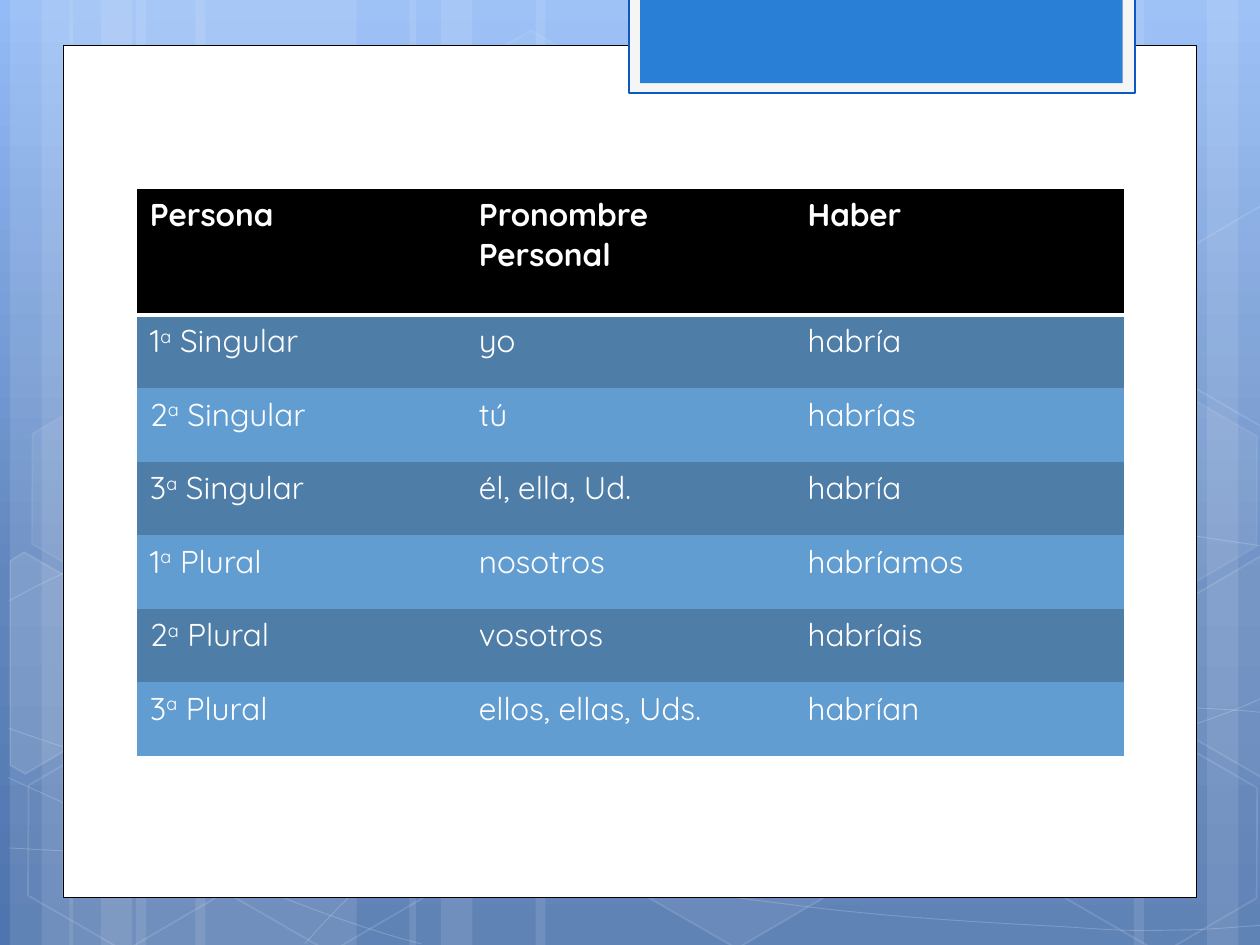
import copy
import math
from dataclasses import dataclass
from typing import Optional

import pptx
import pptx.dml.color
import pptx.enum.shapes
import pptx.oxml
import pptx.oxml.ns
import pptx.util
from lxml import etree

Inches, Pt = pptx.util.Inches, pptx.util.Pt
SHAPE = pptx.enum.shapes.MSO_SHAPE
qn = pptx.oxml.ns.qn
TILT = 30


@dataclass(frozen=True)
class Theme:
    font: str = "Quicksand"
    body: float = 18
    white: str = "FFFFFF"
    black: str = "000000"
    tab: str = "297FD5"
    tab_frame: str = "F5F5F5"
    tab_line: str = "0E58C4"
    bands: tuple = ("4E7EA7", "629DD1")
    sky: tuple = ((0, "93BBF6"), (0.62, "6186BE"), (1, "4F75AE"))


@dataclass(frozen=True)
class Style:
    fill: Optional[str] = None
    fill_alpha: int = 100
    line: Optional[str] = None
    width: float = 1
    line_alpha: int = 100


@dataclass(frozen=True)
class Hexagon:
    x: float
    y: float
    fill_alpha: int
    line_alpha: int


@dataclass(frozen=True)
class CutHexagon:
    center: tuple
    corners: tuple
    fill_alpha: int


T = Theme()


def rgb(value: str):
    return pptx.dml.color.RGBColor.from_string(value)


def paint(fill, color: str, alpha: int = 100) -> None:
    fill.solid()
    fill.fore_color.rgb = rgb(color)
    if alpha < 100:
        node = fill._xPr.find(qn("a:solidFill")).find(qn("a:srgbClr"))
        etree.SubElement(node, qn("a:alpha")).set("val", str(alpha * 1000))


def apply_style(sp, style: Style) -> None:
    sp.shadow.inherit = False
    if style.fill and style.fill_alpha:
        paint(sp.fill, style.fill, style.fill_alpha)
    else:
        sp.fill.background()
    if style.line:
        sp.line.width = Pt(style.width)
        paint(sp.line.fill, style.line, style.line_alpha)
    else:
        sp.line.fill.background()


def add_box(s, x: float, y: float, w: float, h: float, style: Style, kind=SHAPE.RECTANGLE):
    sp = s.shapes.add_shape(kind, Inches(x), Inches(y), Inches(w), Inches(h))
    apply_style(sp, style)
    return sp


def add_outline(s, points, style: Style, close: bool):
    # Freeform coordinates are whole numbers, so lengths go in as EMU
    (x, y), *rest = [(Inches(px), Inches(py)) for px, py in points]
    fb = s.shapes.build_freeform(x, y)
    fb.add_line_segments(rest, close=close)
    sp = fb.convert_to_shape()
    apply_style(sp, style)
    return sp


def add_curve(s, knots, style: Style) -> None:
    """Turn each three line segments into one cubic Bézier segment."""
    sp = add_outline(s, knots, style, close=False)
    segments = list(sp._element.iter(qn("a:lnTo")))
    for i in range(0, len(segments), 3):
        curve = etree.Element(qn("a:cubicBezTo"))
        segments[i].addprevious(curve)
        for segment in segments[i:i + 3]:
            curve.append(segment[0])
            segment.getparent().remove(segment)


def add_hexagon(s, item: Hexagon) -> None:
    style = Style(T.white, item.fill_alpha, T.white, 1, item.line_alpha)
    sp = add_box(s, item.x, item.y, 1.75, 1.52, style, SHAPE.HEXAGON)
    sp.adjustments[0] = 0.285
    sp.rotation = TILT


def add_cut_hexagon(s, item: CutHexagon) -> None:
    """Lay the corners level about the center, then tilt the shape."""
    cx, cy = item.center
    cos, sin = math.cos(math.radians(TILT)), math.sin(math.radians(TILT))
    level = [(cx + (x - cx) * cos + (y - cy) * sin, cy - (x - cx) * sin + (y - cy) * cos)
             for x, y in item.corners]
    style = Style(T.white, item.fill_alpha, T.white, 1, 12)
    add_outline(s, level, style, close=True).rotation = TILT


def add_text(p, text: str, *, bold: bool = False, raised: bool = False) -> None:
    r = p.add_run()
    r.text = text
    r.font.name, r.font.size, r.font.bold = T.font, Pt(T.body), bold
    r.font.color.rgb = rgb(T.white)
    if raised:
        r.font._element.set("baseline", "30000")


def underline_cell(cell, color: str, width: float) -> None:
    ln = pptx.oxml.parse_xml(
        f'<a:lnB {pptx.oxml.ns.nsdecls("a")} w="{Pt(width)}"><a:solidFill>'
        f'<a:srgbClr val="{color}"/></a:solidFill></a:lnB>')
    cell._tc.get_or_add_tcPr().insert(0, ln)


def paint_background(s) -> None:
    fill = s.background.fill
    fill.gradient()
    fill.gradient_angle = 270
    stop_list = next(s.element.iter(qn("a:gsLst")))
    stop_list.append(copy.deepcopy(stop_list[-1]))
    for stop, (position, color) in zip(fill.gradient_stops, T.sky):
        stop.position = position
        stop.color.rgb = rgb(color)


def add_conjugation(s, header, rows) -> None:
    frame = s.shapes.add_table(len(rows) + 1, len(header), Inches(1.09), Inches(1.5),
                               Inches(7.83), Inches(4.5))
    table = frame.table
    table.horz_banding = False
    # "No Style, No Grid"
    next(frame._element.iter(qn("a:tableStyleId"))).text = "{2D5ABB26-0587-4C30-8999-92F81FD0307C}"
    for col in table.columns:
        col.width = Inches(2.61)
    for i, row in enumerate(table.rows):
        row.height = Inches(3.5 / len(rows) if i else 1)
    for c, title in enumerate(header):
        cell = table.cell(0, c)
        paint(cell.fill, T.black)
        underline_cell(cell, T.white, 2)
        add_text(cell.text_frame.paragraphs[0], title, bold=True)
    for i, ((ordinal, number), *words) in enumerate(rows):
        cells = [table.cell(i + 1, c) for c in range(len(header))]
        for cell in cells:
            paint(cell.fill, T.bands[i % 2])
        p = cells[0].text_frame.paragraphs[0]
        add_text(p, ordinal)
        add_text(p, "a", raised=True)
        add_text(p, f" {number}")
        for cell, word in zip(cells[1:], words):
            add_text(cell.text_frame.paragraphs[0], word)


STRIPES = ((1.08, 1.75), (0.08, 0.5), (0.33, 0.83), (1.55, 1.75), (0.55, 0.5), (0.8, 0.83),
           (7.33, 1.75), (9.58, 0.5), (9, 0.83), (4.25, 3.08), (3.25, 0.5), (3.5, 0.83))
CURVES = (
    ((0.07, 6.73), (0.61, 6.76), (1.15, 6.79), (1.9, 6.78), (2.65, 6.77), (3.58, 6.75), (4.58, 6.65),
     (5.58, 6.55), (7, 6.36), (7.92, 6.17), (8.83, 5.98), (9.77, 5.68), (10.07, 5.51)),
    ((0.07, 4.77), (0.36, 4.61), (0.65, 4.46), (1.21, 4.31), (1.78, 4.16), (2.59, 3.94), (3.47, 3.87),
     (4.36, 3.8), (5.44, 3.79), (6.54, 3.87), (7.64, 3.95), (9.47, 4.26), (10.07, 4.34)),
    ((0.06, 6.17), (1.27, 6.72), (2.47, 7.27), (3.34, 7.49)),
    ((0.07, 5.78), (0.38, 5.89), (0.7, 6), (1.28, 6.16), (1.86, 6.31), (2.73, 6.56), (3.57, 6.73),
     (4.4, 6.9), (5.45, 7.08), (6.28, 7.18), (7.11, 7.29), (8, 7.33), (8.53, 7.36),
     (9.05, 7.4), (9.19, 7.38), (9.45, 7.38), (9.71, 7.37), (9.89, 7.35), (10.07, 7.34)),
    ((2.42, 7.49), (2.6, 7.29), (2.78, 7.09), (3.02, 6.91), (3.26, 6.73), (3.6, 6.53), (3.88, 6.39),
     (4.16, 6.25), (4.33, 6.19), (4.7, 6.09), (5.06, 5.99), (5.73, 5.85), (6.08, 5.78),
     (6.44, 5.71), (6.49, 5.71), (6.8, 5.69), (7.11, 5.66), (7.6, 5.63), (7.94, 5.62),
     (8.29, 5.61), (8.86, 5.62), (8.86, 5.62), (8.86, 5.62), (9.53, 5.62), (9.53, 5.62),
     (9.71, 5.63), (9.88, 5.64), (9.97, 5.65), (10.06, 5.66), (10.03, 5.65), (10.06, 5.66)),
)
HONEYCOMB = (
    Hexagon(3.34, 0.36, 4, 8), Hexagon(4.97, 5.89, 6, 12),
    CutHexagon((0.36, 5.35), ((0.08, 4.45), (0.19, 4.38), (0.96, 4.82), (0.95, 5.7), (0.2, 6.14), (0.08, 6.07)), 10),
    Hexagon(0.11, 5.91, 0, 12), Hexagon(0.14, 3.12, 7, 8), Hexagon(1.74, 5.92, 0, 12),
    Hexagon(7.53, 4.53, 10, 12), Hexagon(8.34, 5.93, 0, 12), Hexagon(8.34, 3.14, 7, 8),
    CutHexagon((9.85, 5.2), ((9.26, 4.85), (10.01, 4.41), (10.09, 4.46), (10.09, 6.13), (10.02, 6.17), (9.26, 5.73)), 4),
    CutHexagon((9.85, 2.41), ((9.26, 2.07), (10.01, 1.63), (10.1, 1.68), (10.09, 3.35), (10.02, 3.39), (9.26, 2.95)), 0),
)
HEADER = ("Persona", "Pronombre Personal", "Haber")
ROWS = (
    (("1", "Singular"), "yo", "habría"), (("2", "Singular"), "tú", "habrías"),
    (("3", "Singular"), "él, ella, Ud.", "habría"), (("1", "Plural"), "nosotros", "habríamos"),
    (("2", "Plural"), "vosotros", "habríais"), (("3", "Plural"), "ellos, ellas, Uds.", "habrían"),
)


def main() -> None:
    prs = pptx.Presentation()
    prs.slide_width, prs.slide_height = Inches(10), Inches(7.5)
    s = prs.slides.add_slide(prs.slide_layouts[6])

    # Backdrop: gradient, stripes, curves and honeycomb
    paint_background(s)
    for x, w in STRIPES:
        add_box(s, x, 0, w, 7.5, Style(T.white, 10))
    for knots in CURVES:
        add_curve(s, knots, Style(line=T.white, width=0.5, line_alpha=20))
    for item in HONEYCOMB:
        draw = add_hexagon if isinstance(item, Hexagon) else add_cut_hexagon
        draw(s, item)

    # Page, top tab and verb table
    add_box(s, 0.5, 0.36, 9, 6.76, Style(T.white, line=T.black, width=0.5))
    add_box(s, 4.99, -0.02, 4.02, 0.76, Style(T.tab_frame, line=T.tab_line, width=1.25))
    add_box(s, 5.08, -0.02, 3.83, 0.68, Style(T.tab))
    add_conjugation(s, HEADER, ROWS)
    prs.save("out.pptx")


if __name__ == "__main__":
    main()
